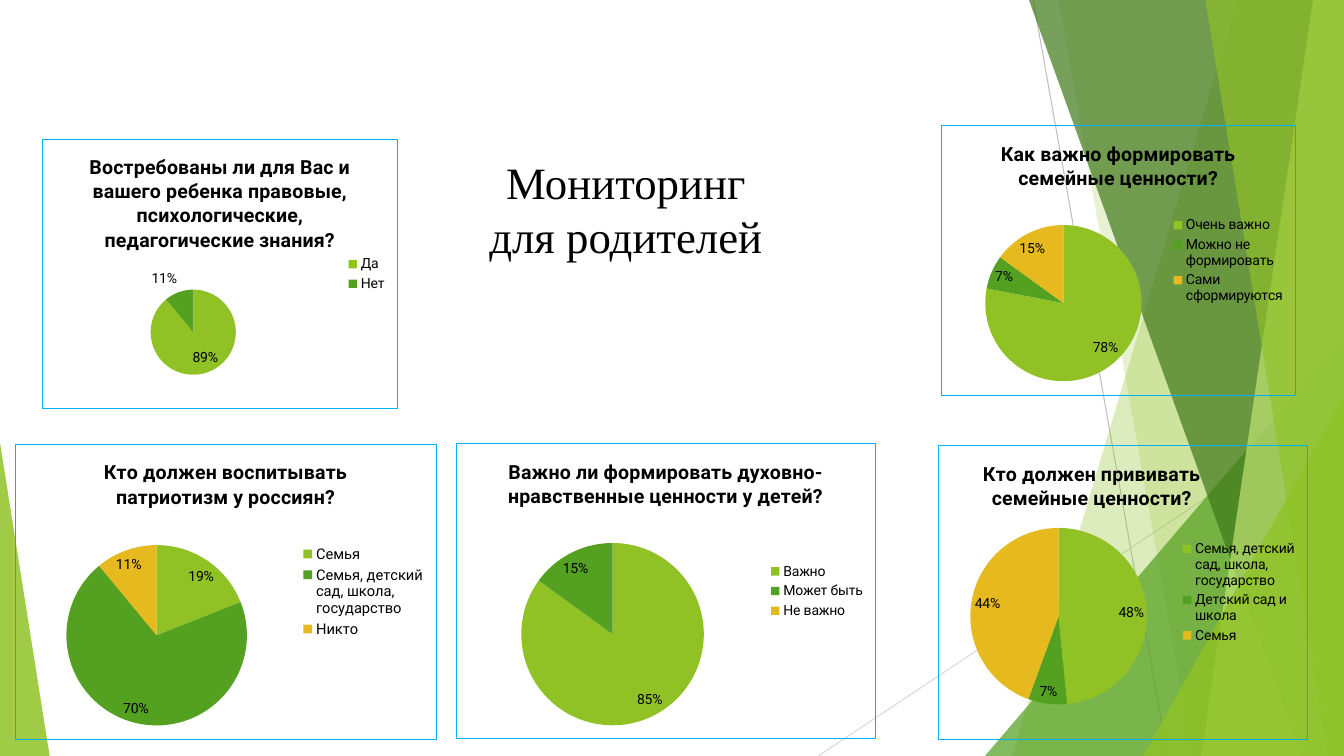
import dataclasses

import pptx
import pptx.chart.data
import pptx.dml.color
import pptx.enum.chart
import pptx.enum.shapes
import pptx.enum.text
import pptx.oxml
import pptx.oxml.ns
import pptx.util

Pt = pptx.util.Pt
qn = pptx.oxml.ns.qn
WIDTH, HEIGHT = 960, 540


@dataclasses.dataclass(frozen=True)
class Theme:
    lime: str = "90C226"
    green: str = "54A021"
    forest: str = "3F7819"
    pale: str = "C0E474"
    gold: str = "E6B91E"
    frame: str = "00B0F0"
    ink: str = "000000"
    grey: str = "BFBFBF"
    silver: str = "D9D9D9"
    body_font: str = "Roboto"
    title_font: str = "Times New Roman"
    title_size: float = 32
    question_size: float = 14
    label_size: float = 10
    hairline: float = 0.75


def rgb(code):
    return pptx.dml.color.RGBColor.from_string(code)


def apply_format(target, values):
    for name, value in values.items():
        setattr(target, name, value)


def apply_font(font, name, size, color, bold=False):
    apply_format(font, {"name": name, "size": Pt(size), "bold": bold})
    font.color.rgb = rgb(color)


def element(tag, body=""):
    spaces = pptx.oxml.ns.nsdecls("a", "c")
    return pptx.oxml.parse_xml(f"<{tag} {spaces}>{body}</{tag}>")


def set_layout(parent, index, values, inner=False):
    for old in parent.findall(qn("c:layout")):
        parent.remove(old)
    body = '<c:layoutTarget val="inner"/>' if inner else ""
    body += "".join(f'<c:{axis}Mode val="edge"/>' for axis in "xy")
    body += "".join(f'<c:{key} val="{value:.4f}"/>' for key, value in zip("xywh", values))
    parent.insert(index, element("c:layout", f"<c:manualLayout>{body}</c:manualLayout>"))


class SlideBuilder:
    def __init__(self, page, theme):
        self.page = page
        self.theme = theme

    def line(self, start, end, color):
        connector = self.page.shapes.add_connector(
            pptx.enum.shapes.MSO_CONNECTOR.STRAIGHT, *map(Pt, start + end))
        connector.line.width = Pt(self.theme.hairline)
        connector.line.color.rgb = rgb(color)
        connector._element.spPr.append(element("a:effectLst"))

    def paint(self, shape, color, opacity):
        shape.shadow.inherit = False
        shape.fill.solid()
        shape.fill.fore_color.rgb = rgb(color)
        tint = next(shape._element.spPr.iter(qn("a:srgbClr")))
        tint.append(element("a:alpha"))
        tint[0].set("val", str(opacity * 1000))
        shape.line.fill.background()

    def band(self, top_x, bottom_x, color, opacity):
        outline = self.page.shapes.build_freeform(Pt(top_x), Pt(0))
        corners = [(WIDTH, 0), (WIDTH, HEIGHT), (bottom_x, HEIGHT)]
        outline.add_line_segments([(Pt(x), Pt(y)) for x, y in corners], close=True)
        self.paint(outline.convert_to_shape(), color, opacity)

    def triangle(self, left, top, width, apex, color, opacity):
        shape = self.page.shapes.add_shape(
            pptx.enum.shapes.MSO_SHAPE.ISOSCELES_TRIANGLE,
            Pt(left), Pt(top), Pt(width), Pt(HEIGHT - top))
        shape.adjustments[0] = apex
        self.paint(shape, color, opacity)

    def title(self, text, frame):
        box = self.page.shapes.add_textbox(*map(Pt, frame))
        apply_format(box.text_frame, {
            "word_wrap": True, "vertical_anchor": pptx.enum.text.MSO_ANCHOR.TOP})
        para = box.text_frame.paragraphs[0]
        apply_format(para, {"text": text, "alignment": pptx.enum.text.PP_ALIGN.CENTER})
        for span in para.runs:
            apply_font(span.font, self.theme.title_font, self.theme.title_size, self.theme.ink)

    def pie(self, question, answers, frame, disc, legend_size=None, title_at=None):
        theme = self.theme
        data = pptx.chart.data.CategoryChartData()
        data.categories = list(answers)
        data.add_series("Ответы", list(answers.values()))
        chart = self.page.shapes.add_chart(
            pptx.enum.chart.XL_CHART_TYPE.PIE, *map(Pt, frame), data).chart
        apply_font(chart.font, theme.body_font, theme.label_size, theme.ink)

        chart.has_title = True
        heading = chart.chart_title.text_frame
        heading.text = question
        apply_font(heading.paragraphs[0].runs[0].font, theme.body_font,
                   theme.question_size, theme.ink, bold=True)
        if title_at:
            set_layout(chart.chart_title._element, 1, title_at)

        chart.has_legend = True
        apply_format(chart.legend, {
            "position": pptx.enum.chart.XL_LEGEND_POSITION.RIGHT, "include_in_layout": False})
        apply_font(chart.legend.font, theme.body_font,
                   legend_size or theme.label_size, theme.ink)

        plot = chart.plots[0]
        apply_format(plot, {"vary_by_categories": True, "has_data_labels": True})
        labels = plot.data_labels
        apply_format(labels, {
            "show_percentage": True, "show_value": False,
            "number_format": "0%", "number_format_is_linked": False,
            "position": pptx.enum.chart.XL_LABEL_POSITION.BEST_FIT})
        apply_font(labels.font, theme.body_font, theme.label_size, theme.ink)
        colors = (theme.lime, theme.green, theme.gold)
        for index, (value, color) in enumerate(zip(answers.values(), colors)):
            fill = plot.series[0].points[index].format.fill
            fill.solid()
            fill.fore_color.rgb = rgb(color)
            if value == 0:
                labels._element.insert(0, element(
                    "c:dLbl", f'<c:idx val="{index}"/><c:delete val="1"/>'))

        left, top, width, height = frame
        x, y, size = disc
        area = chart._chartSpace.chart.plotArea
        set_layout(area, 0, ((x - left) / width, (y - top) / height,
                             size / width, size / height), inner=True)
        border = (f'<a:noFill/><a:ln w="{Pt(theme.hairline)}"><a:solidFill>'
                  f'<a:srgbClr val="{theme.frame}"/></a:solidFill></a:ln>')
        chart._chartSpace.chart.addnext(element("c:spPr", border))


def main():
    deck = pptx.Presentation()
    apply_format(deck, {"slide_width": Pt(WIDTH), "slide_height": Pt(HEIGHT)})
    theme = Theme()
    builder = SlideBuilder(deck.slides.add_slide(deck.slide_layouts[6]), theme)

    builder.line((738, 0), (834, HEIGHT), theme.grey)
    builder.line((WIDTH, 290), (584.5, HEIGHT), theme.silver)
    builder.band(884, 723, theme.lime, 30)
    builder.band(756, 852, theme.lime, 20)
    builder.triangle(703.5, 240, 256.5, 1, theme.green, 72)
    builder.band(735, 929.5, theme.forest, 70)
    builder.band(938, 858, theme.pale, 70)
    builder.band(861, 949, theme.lime, 65)
    builder.triangle(816.5, 283, 143.5, 1, theme.lime, 80)
    builder.triangle(0, 316, 35.5, 0, theme.lime, 85)

    builder.title("Мониторинг\vдля родителей", (108.7, 107.3, 676.8, 103.7))

    builder.pie("Востребованы ли для Вас и вашего ребенка правовые, "
                "психологические, педагогические знания?",
                {"Да": 89, "Нет": 11},
                (30.2, 99.2, 254, 193), (107.5, 207, 61))
    builder.pie("Как важно формировать семейные ценности?",
                {"Очень важно": 78, "Можно не формировать": 7, "Сами сформируются": 15},
                (671.8, 89.4, 254, 193.5), (703.5, 160.7, 112))
    builder.pie("Кто должен прививать семейные ценности?",
                {"Семья, детский сад, школа, государство": 48,
                 "Детский сад и школа": 7, "Семья": 44},
                (670.3, 317.5, 264, 211), (692.8, 377, 126.5), title_at=(0.11, 0.04))
    builder.pie("Кто должен воспитывать патриотизм у россиян?",
                {"Семья": 19, "Семья, детский сад, школа, государство": 70, "Никто": 11},
                (10.5, 316.8, 301.5, 211.5), (47.2, 389.3, 129.3), legend_size=10.5)
    builder.pie("Важно ли формировать духовно-нравственные ценности у детей?",
                {"Важно": 85, "Может быть": 15, "Не важно": 0},
                (325.4, 316.2, 300.5, 212), (372.2, 387.8, 130.7))

    deck.save("out.pptx")


if __name__ == "__main__":
    main()
